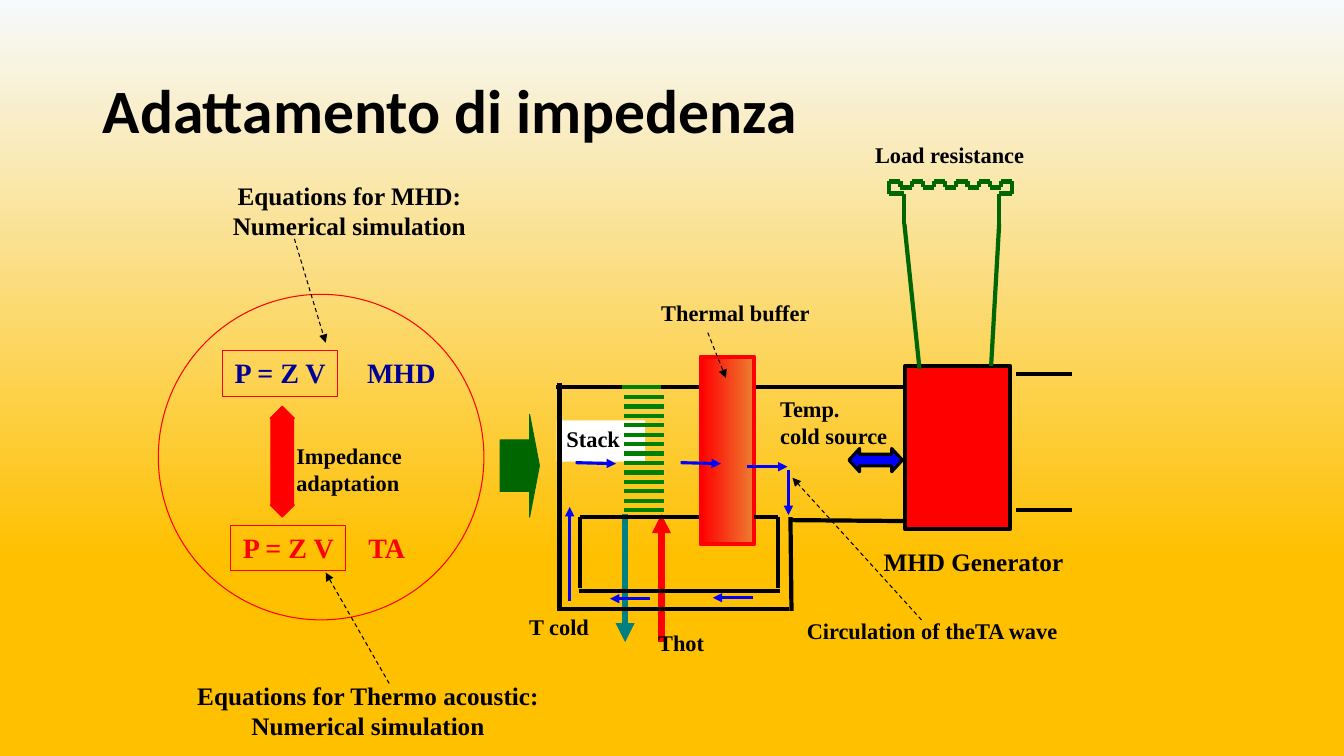
from itertools import pairwise

from lxml.etree import SubElement
from pptx import Presentation
from pptx.dml.color import RGBColor
from pptx.enum.dml import MSO_LINE
from pptx.enum.shapes import MSO_CONNECTOR, MSO_SHAPE
from pptx.enum.text import MSO_ANCHOR, MSO_AUTO_SIZE, PP_ALIGN
from pptx.oxml.ns import qn
from pptx.util import Inches, Pt

BLACK, WHITE, RED, BLUE = "000000", "FFFFFF", "FF0000", "0000FF"
NAVY, TEAL, GREEN, DARK_GREEN, ORANGE = "000099", "008080", "008000", "006600", "ED7D31"
LEFT, CENTER = PP_ALIGN.LEFT, PP_ALIGN.CENTER

TITLE = "Adattamento di impedenza"

# text, box (left, top, width, height), size, colour, alignment
FITTED_LABELS = [
    ("Load resistance", (8.58, 1.35, 1.69, 0.37), 16, BLACK, LEFT),
    ("Thermal buffer", (6.46, 2.92, 1.68, 0.37), 16, BLACK, LEFT),
    ("Temp.\ncold source", (7.64, 3.87, 1.27, 0.64), 16, BLACK, LEFT),
    ("Impedance\nadaptation", (2.84, 4.34, 1.25, 0.64), 16, BLACK, LEFT),
    ("Circulation of theTA wave", (7.88, 6.07, 2.73, 0.37), 16, BLACK, CENTER),
    ("MHD Generator", (8.66, 5.37, 1.99, 0.4), 18, BLACK, CENTER),
    ("Equations for Thermo acoustic:\nNumerical simulation", (1.85, 6.7, 3.6, 0.7), 18, BLACK, CENTER),
    ("Equations for MHD:\nNumerical simulation", (2.21, 1.74, 2.51, 0.7), 18, BLACK, CENTER),
    ("MHD", (3.54, 3.48, 0.88, 0.43), 20, NAVY, CENTER),
    ("TA", (3.54, 5.21, 0.59, 0.43), 20, RED, CENTER),
]
WRAPPED_LABELS = [
    ("T cold", (5.15, 6.03, 2.03, 0.79), 16, BLACK, LEFT),
    ("Thot", (6.43, 6.19, 2.37, 0.68), 16, BLACK, LEFT),
]
EQUATIONS = [
    ("P = Z V", (2.21, 3.48, 1.14, 0.45), 20, NAVY, CENTER),
    ("P = Z V", (2.29, 5.21, 1.14, 0.45), 20, RED, CENTER),
]
STACK = ("Stack", (5.52, 4.17, 0.88, 0.41), 16, BLACK, LEFT)

# each line runs from (x, y) to (x, y)
HEAT_FLOWS = [((6.56, 6.37), (6.56, 5.1), RED), ((6.2, 5.1), (6.2, 6.37), TEAL)]
TOP_WALL = ((5.51, 3.84), (8.98, 3.84))
WALLS = [
    ((5.55, 3.8), (5.55, 6.06)),
    ((7.83, 6.04), (5.56, 6.04)),
    ((7.84, 5.13), (7.85, 6.06)),
    ((7.85, 5.16), (9.05, 5.17)),
    ((5.75, 5.13), (6.93, 5.13)),
    ((7.72, 5.13), (7.48, 5.13)),
    ((5.75, 5.83), (5.75, 5.13)),
    ((7.72, 5.13), (7.72, 5.83)),
    ((7.74, 5.86), (5.74, 5.86)),
    ((10.08, 3.71), (10.63, 3.71)),
    ((10.08, 5.06), (10.63, 5.06)),
]
WAVE_ARROWS = [
    ((5.71, 4.59), (6.11, 4.6)),
    ((6.75, 4.59), (7.15, 4.6)),
    ((7.41, 4.63), (7.81, 4.63)),
    ((7.82, 4.66), (7.82, 5.11)),
    ((7.47, 5.93), (7.07, 5.93)),
    ((6.45, 5.94), (6.05, 5.94)),
    ((5.65, 5.96), (5.65, 5.03)),
]
POINTERS = [
    ((9.14, 6.15), (7.86, 4.74)),
    ((7.02, 3.3), (7.2, 3.75)),
    ((2.92, 2.37), (3.23, 3.4)),
    ((3.86, 6.78), (3.23, 5.68)),
]
PLATE_COUNT, PLATE_TOP, PLATE_BOTTOM = 13, 3.94, 5.06
TOOTH_COUNT, COIL_LEFT, COIL_RIGHT = 11, 8.82, 10.04
COIL_TOP, COIL_NOTCH, COIL_END = 1.8, 1.86, 1.92


def color(value):
    return RGBColor.from_string(value)


def write(shape, text, size, text_color, align, fitted):
    frame = shape.text_frame
    frame.text = text
    frame.word_wrap = not fitted
    frame.auto_size = MSO_AUTO_SIZE.SHAPE_TO_FIT_TEXT if fitted else MSO_AUTO_SIZE.NONE
    frame.vertical_anchor = MSO_ANCHOR.TOP
    for paragraph in frame.paragraphs:
        paragraph.alignment = align
        for run in paragraph.runs:
            run.font.name = "Times New Roman"
            run.font.size = Pt(size)
            run.font.bold = True
            run.font.color.rgb = color(text_color)


def add_label(text, box, *style, fitted=True):
    write(slide.shapes.add_textbox(*map(Inches, box)), text, *style, fitted)


def add_shape(kind, box, fill=None, line=None, width=0.75, adjustments=()):
    shape = slide.shapes.add_shape(kind, *map(Inches, box))
    shape.shadow.inherit = False
    if fill:
        shape.fill.solid()
        shape.fill.fore_color.rgb = color(fill)
    else:
        shape.fill.background()
    if line:
        shape.line.color.rgb = color(line)
        shape.line.width = Pt(width)
    else:
        shape.line.fill.background()
    for index, value in enumerate(adjustments):
        shape.adjustments[index] = value
    return shape


def add_line(start, end, line_color=BLACK, width=3, arrow=False, dashed=False):
    line = slide.shapes.add_connector(MSO_CONNECTOR.STRAIGHT, *map(Inches, start + end))
    line.line.color.rgb = color(line_color)
    line.line.width = Pt(width)
    if dashed:
        line.line.dash_style = MSO_LINE.DASH
    properties = line.line._get_or_add_ln()
    if arrow:
        SubElement(properties, qn("a:tailEnd"), type="triangle")
    SubElement(properties.getparent(), qn("a:effectLst"))


def set_gradient(fill, first, last, angle, last_position=1):
    fill.gradient()
    fill.gradient_angle = angle
    stops = fill.gradient_stops
    stops[0].color.rgb, stops[1].color.rgb = color(first), color(last)
    stops[0].position, stops[1].position = 0, last_position


def load_circuit():
    """Points along both leads and the square-toothed resistor."""
    pitch = (COIL_RIGHT - COIL_LEFT) / TOOTH_COUNT
    points = [(9.12, 3.66), (8.97, 2.22), (8.97, COIL_END), (COIL_LEFT, COIL_END)]
    for tooth in range(TOOTH_COUNT):
        level = COIL_NOTCH if tooth % 2 else COIL_TOP
        points += [(COIL_LEFT + (tooth + side) * pitch, level) for side in (0, 1)]
    return points + [(COIL_RIGHT, COIL_END), (9.91, COIL_END), (9.91, 2.22), (9.83, 3.63)]


presentation = Presentation()
presentation.slide_width, presentation.slide_height = Inches(13.33), Inches(7.5)
slide = presentation.slides.add_slide(presentation.slide_layouts[5])
set_gradient(slide.background.fill, "F7FAFD", "FFC000", 270, 0.74)

title = slide.shapes.title
title.left, title.top, title.width, title.height = map(Inches, (0.92, 0.4, 11.5, 1.45))
title.text_frame.text = TITLE
title.text_frame.auto_size = MSO_AUTO_SIZE.NONE
title.text_frame.vertical_anchor = MSO_ANCHOR.MIDDLE
heading = title.text_frame.paragraphs[0]
heading.alignment, heading.line_spacing = LEFT, 0.9
title_font = heading.runs[0].font
title_font.name, title_font.size, title_font.bold = "Calibri", Pt(44), True
title_font.color.rgb = color(BLACK)
outline = SubElement(heading.runs[0]._r.rPr, qn("a:ln"), w=str(Pt(0.75)))
SubElement(SubElement(outline, qn("a:solidFill")), qn("a:srgbClr"), val=WHITE)
heading.runs[0]._r.rPr.insert(0, outline)

stack_text, stack_box, *stack_style = STACK
write(add_shape(MSO_SHAPE.RECTANGLE, stack_box, WHITE), stack_text, *stack_style, False)
for start, end, flow_color in HEAT_FLOWS:
    add_line(start, end, flow_color, 4.5, arrow=True)
add_line(*TOP_WALL)
add_line((6.17, 3.84), (6.56, 3.84), GREEN, 2.25)
for plate in range(PLATE_COUNT):
    y = PLATE_TOP + plate * (PLATE_BOTTOM - PLATE_TOP) / (PLATE_COUNT - 1)
    add_line((6.19, y), (6.59, y), GREEN)

thermal_buffer = add_shape(MSO_SHAPE.RECTANGLE, (6.95, 3.54, 0.53, 1.86), RED, RED, 3)
set_gradient(thermal_buffer.fill, RED, ORANGE, 0)
for start, end in WALLS:
    add_line(start, end)
for start, end in WAVE_ARROWS:
    add_line(start, end, BLUE, 2.25, arrow=True)
add_shape(MSO_SHAPE.RECTANGLE, (8.98, 3.63, 1.04, 1.62), RED, BLACK, 3)
add_shape(MSO_SHAPE.LEFT_RIGHT_ARROW, (8.42, 4.45, 0.53, 0.23), BLUE, BLACK, 2.25, (0.5, 0.46))
for start, end in pairwise(load_circuit()):
    add_line(start, end, DARK_GREEN)

add_shape(MSO_SHAPE.OVAL, (1.57, 2.92, 3.23, 3.23), line=RED)
add_shape(MSO_SHAPE.UP_DOWN_ARROW, (2.68, 4.03, 0.24, 1.1), RED, RED, adjustments=(0.5, 0.93))
add_shape(MSO_SHAPE.RIGHT_ARROW, (4.96, 4.11, 0.39, 1.02), DARK_GREEN, DARK_GREEN, adjustments=(0.5, 0.25))
for text, box, *style in EQUATIONS:
    write(add_shape(MSO_SHAPE.RECTANGLE, box, line=RED), text, *style, True)
for start, end in POINTERS:
    add_line(start, end, BLACK, 0.75, arrow=True, dashed=True)
for label in FITTED_LABELS:
    add_label(*label)
for label in WRAPPED_LABELS:
    add_label(*label, fitted=False)

presentation.save("out.pptx")
